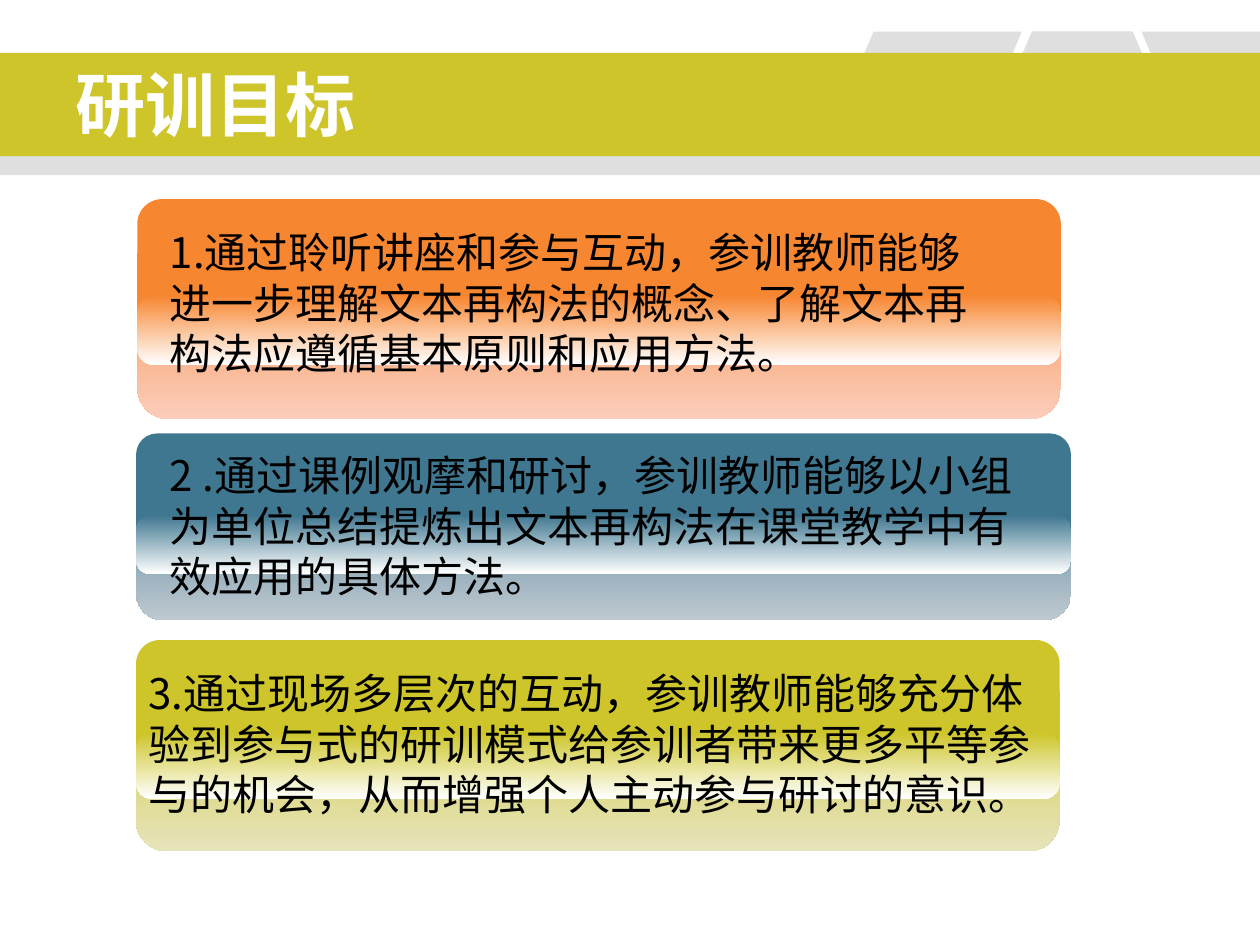
from pptx import Presentation
from pptx.dml.color import RGBColor
from pptx.enum.shapes import MSO_SHAPE
from pptx.enum.text import MSO_ANCHOR
from pptx.oxml.ns import qn
from pptx.util import Inches, Pt
from lxml import etree

RECT = MSO_SHAPE.RECTANGLE
ROUNDED = MSO_SHAPE.ROUNDED_RECTANGLE
SLANTED = MSO_SHAPE.PARALLELOGRAM
MIDDLE, TOP = MSO_ANCHOR.MIDDLE, MSO_ANCHOR.TOP

# Slide grid: 100 columns by 75 rows
COLUMNS, ROWS = 100, 75
WIDTH, HEIGHT = Inches(10), Inches(7.5)

OLIVE, TEAL, ORANGE = "CDC529", "407790", "F78631"
GRAY, WHITE, BLACK = "808080", "FFFFFF", "000000"


def color(hex_code):
    return RGBColor.from_string(hex_code)


class GoalSlide:
    font = "Noto Sans CJK SC"
    gray_alpha = 25

    def __init__(self, deck):
        self.slide = deck.slides.add_slide(deck.slide_layouts[6])

    def group(self):
        return self.slide.shapes.add_group_shape().shapes

    def place(self, left, top, width, height):
        x, y = WIDTH / COLUMNS, HEIGHT / ROWS
        return [round(v) for v in (left * x, top * y, width * x, height * y)]

    def finish(self, shape, fill, alpha=None):
        """Flat fill for one colour, top-to-bottom gradient for a pair."""
        shape.shadow.inherit = False
        shape.line.fill.background()
        if isinstance(fill, tuple):
            shape.fill.gradient()
            shape.fill.gradient_angle = 270
            for stop, shade in zip(shape.fill.gradient_stops, fill):
                stop.color.rgb = color(shade)
        else:
            shape.fill.solid()
            shape.fill.fore_color.rgb = color(fill)
        if alpha:
            tint = shape.fill._xPr.find(".//" + qn("a:srgbClr"))
            etree.SubElement(tint, qn("a:alpha"), val=str(alpha * 1000))

    def block(self, kind, area, fill, alpha=None, corner=None, parent=None):
        parent = parent or self.slide.shapes
        shape = parent.add_shape(kind, *self.place(*area))
        if corner is not None:
            shape.adjustments[0] = corner
        self.finish(shape, fill, alpha)

    def outline(self, points, fill, alpha, parent):
        corners = [self.place(x, y, 0, 0)[:2] for x, y in points]
        builder = parent.build_freeform(*corners[0])
        builder.add_line_segments(corners[1:], close=True)
        self.finish(builder.convert_to_shape(), fill, alpha)

    def panel(self, left, top, width, height, base, pale):
        """Glossy panel: pale foot, flat face and a fade to white."""
        parts = self.group()
        layers = [(0.187, 1.295, (base, pale), 0.167),
                  (0, 1, base, 0.167),
                  (0.65, 0.465, (base, WHITE), 0.237)]
        for offset, share, fill, corner in layers:
            area = (left, top + offset * height, width, share * height)
            self.block(ROUNDED, area, fill, corner=corner, parent=parts)

    def text(self, area, words, size, shade, bold=False, anchor=TOP, pitch=None):
        frame = self.slide.shapes.add_textbox(*self.place(*area)).text_frame
        frame.word_wrap = True
        frame.vertical_anchor = anchor
        paragraph = frame.paragraphs[0]
        if pitch:
            paragraph.line_spacing = Pt(pitch)
        run = paragraph.add_run()
        run.text = words
        run.font.size, run.font.bold = Pt(size), bold
        run.font.color.rgb = color(shade)
        run.font.name = self.font
        etree.SubElement(run.font._element, qn("a:ea"), typeface=self.font)


def main():
    deck = Presentation()
    deck.slide_width, deck.slide_height = WIDTH, HEIGHT
    page = GoalSlide(deck)

    # Header: gray strip, three slanted tabs, olive band and title
    alpha = page.gray_alpha
    page.block(RECT, (0, 8.9, COLUMNS, 5), GRAY, alpha)
    tabs = page.group()
    page.block(SLANTED, (65.3, 2.5, 15.8, 9.5), GRAY, alpha, 0.425, tabs)
    page.outline([(94, 12.1), (89.9, 2.5), (81.9, 2.5), (77.8, 12.1)],
                 GRAY, alpha, tabs)
    page.outline([(90.6, 2.5), (94.6, 12), (COLUMNS, 12), (COLUMNS, 2.5)],
                 GRAY, alpha, tabs)
    page.block(RECT, (0, 4.2, COLUMNS, 8.2), OLIVE)
    page.text((5, 4.7, 66.7, 7), "研训目标", 40, WHITE, True, MIDDLE)

    # Goal panels
    page.panel(10.8, 50.8, 73.3, 11.3, OLIVE, "E7E4BC")
    page.panel(10.8, 34.4, 74.2, 10, TEAL, "BEC9D0")
    page.panel(10.9, 15.8, 73.3, 11.8, ORANGE, "FBCDBC")

    # Goal wording: left, top, width, words
    goals = [
        (12.5, 17.5, 66.7, "1.通过聆听讲座和参与互动，参训教师能够进一步理解"
                           "文本再构法的概念、了解文本再构法应遵循基本原则和应用方法。"),
        (12.5, 35.2, 69.2, "2 .通过课例观摩和研讨，参训教师能够以小组为单位"
                           "总结提炼出文本再构法在课堂教学中有效应用的具体方法。"),
        (10.8, 52.5, 72.5, "3.通过现场多层次的互动，参训教师能够充分体验到参与式的研训"
                           "模式给参训者带来更多平等参与的机会，从而增强个人主动参与研讨的意识。"),
    ]
    for left, top, width, words in goals:
        page.text((left, top, width, 13.1), words, 24, BLACK, pitch=28.8)

    deck.save("out.pptx")


if __name__ == "__main__":
    main()
